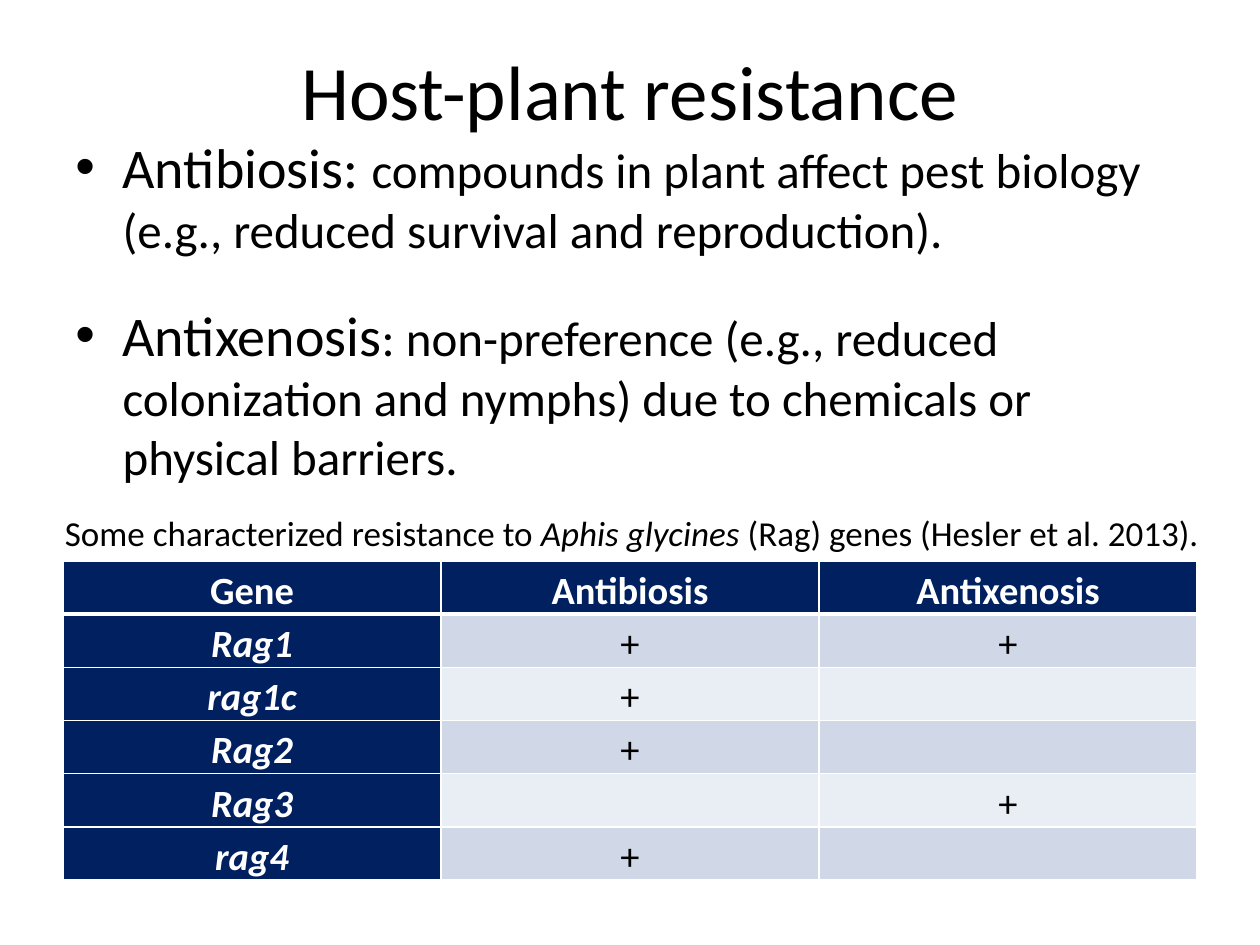
"""Build a slide on host-plant resistance with two definitions and a gene table."""
from lxml import etree
from pptx import Presentation
from pptx import util as u
from pptx.dml.color import RGBColor
from pptx.enum import text
from pptx.oxml import ns

BLACK = RGBColor(0, 0, 0)
WHITE = RGBColor(255, 255, 255)
NAVY = RGBColor(0x00, 0x20, 0x60)
BANDS = [RGBColor(0xD0, 0xD8, 0xE8), RGBColor(0xE9, 0xED, 0xF4)]
FONT = "Calibri"

TITLE = "Host-plant resistance"
DEFINITIONS = [
    [("Antibiosis: ", 32),
     ("compounds in plant affect pest biology (e.g., reduced survival and reproduction).", 28)],
    [("Antixenosis", 32),
     (": non-preference (e.g., reduced colonization and nymphs) due to chemicals or "
      "physical barriers.", 28)],
]
CAPTION = [
    ("Some characterized resistance to ", False),
    ("Aphis glycines ", True),
    ("(Rag) genes (Hesler et al. 2013).", False),
]
GENES = [
    ("Gene", "Antibiosis", "Antixenosis"),
    ("Rag1", "+", "+"),
    ("rag1c", "+", ""),
    ("Rag2", "+", ""),
    ("Rag3", "", "+"),
    ("rag4", "+", ""),
]

LEFT, WIDTH = 36, 648
TITLE_BOX = (LEFT, 6, WIDTH, 90)
BODY_BOX = (LEFT, 72, WIDTH, 356)
CAPTION_BOX = (30, 289, 672, 31.5)
TABLE_BOX = (LEFT, 320.5, WIDTH, 182.4)
INDENT = 27


def points(values):
    return [u.Pt(value) for value in values]


def style(font, size, color=BLACK, bold=False, italic=False):
    font.name, font.size = FONT, u.Pt(size)
    font.bold, font.italic = bold, italic
    font.color.rgb = color


def add_span(para, words, size, italic=False):
    span = para.add_run()
    span.text = words
    style(span.font, size, italic=italic)


def add_text_box(page, place):
    box = page.shapes.add_textbox(*points(place))
    box.text_frame.word_wrap = True
    return box.text_frame


def add_bullet(para):
    props = para._p.get_or_add_pPr()
    props.set("marL", str(u.Pt(INDENT)))
    props.set("indent", str(-u.Pt(INDENT)))
    etree.SubElement(props, ns.qn("a:buFont")).set("typeface", "Arial")
    etree.SubElement(props, ns.qn("a:buChar")).set("char", "•")


def add_borders(cell, bottom):
    props = cell._tc.get_or_add_tcPr()
    for side, width in (("L", 1), ("R", 1), ("T", 1), ("B", bottom)):
        line = etree.SubElement(props, ns.qn("a:ln" + side), w=str(u.Pt(width)))
        fill = etree.SubElement(line, ns.qn("a:solidFill"))
        etree.SubElement(fill, ns.qn("a:srgbClr"), val=str(WHITE))


def add_title(page):
    title = page.shapes.title
    title.left, title.top, title.width, title.height = points(TITLE_BOX)
    title.text_frame.text = TITLE
    title.text_frame.vertical_anchor = text.MSO_ANCHOR.MIDDLE
    para = title.text_frame.paragraphs[0]
    para.alignment = text.PP_ALIGN.CENTER
    style(para.runs[0].font, 44)


def add_definitions(page):
    frame = add_text_box(page, BODY_BOX)
    for index, spans in enumerate(DEFINITIONS):
        para = frame.add_paragraph() if index else frame.paragraphs[0]
        para.space_before = para.space_after = u.Pt(12)
        add_bullet(para)
        for words, size in spans:
            add_span(para, words, size)


def add_gene_table(page):
    rows, columns = len(GENES), len(GENES[0])
    table = page.shapes.add_table(rows, columns, *points(TABLE_BOX)).table
    for row, values in enumerate(GENES):
        for column, value in enumerate(values):
            cell = table.cell(row, column)
            heading = row == 0 or column == 0
            add_borders(cell, 1 if row else 3)
            cell.fill.solid()
            cell.fill.fore_color.rgb = NAVY if heading else BANDS[(row - 1) % 2]
            cell.margin_left = cell.margin_right = u.Pt(5)
            cell.margin_top = cell.margin_bottom = 0
            cell.vertical_anchor = text.MSO_ANCHOR.BOTTOM
            cell.text_frame.text = value
            para = cell.text_frame.paragraphs[0]
            para.alignment = text.PP_ALIGN.CENTER
            para.line_spacing = 1.15
            for span in para.runs:
                style(span.font, 22, WHITE if heading else BLACK, heading,
                      column == 0 and row > 0)


def add_caption(page):
    para = add_text_box(page, CAPTION_BOX).paragraphs[0]
    for words, italic in CAPTION:
        add_span(para, words, 20, italic)


def main():
    deck = Presentation()
    deck.slide_width, deck.slide_height = points((720, 540))
    page = deck.slides.add_slide(deck.slide_layouts.get_by_name("Title Only"))
    add_title(page)
    add_definitions(page)
    add_gene_table(page)
    add_caption(page)
    deck.save("out.pptx")


if __name__ == "__main__":
    main()
